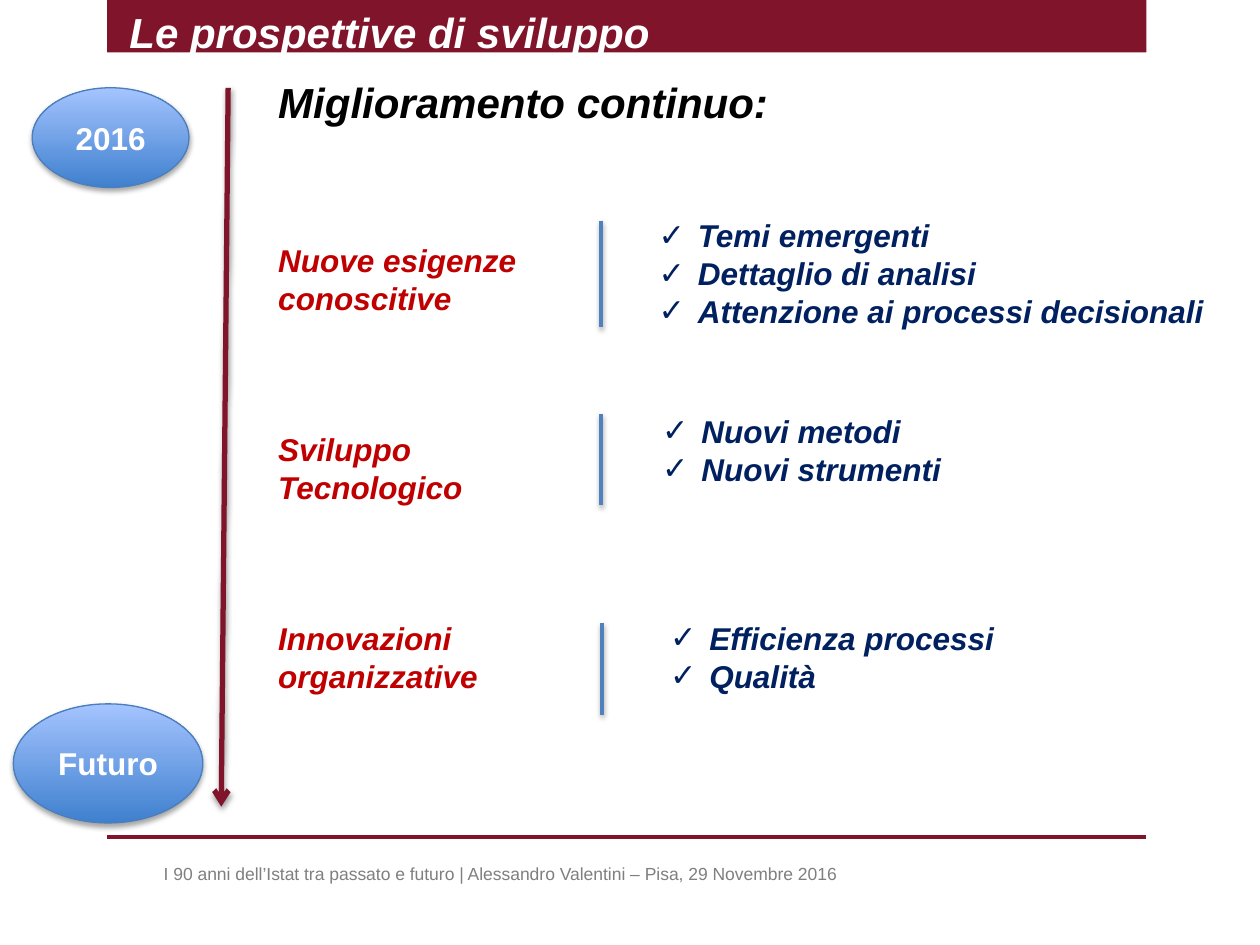
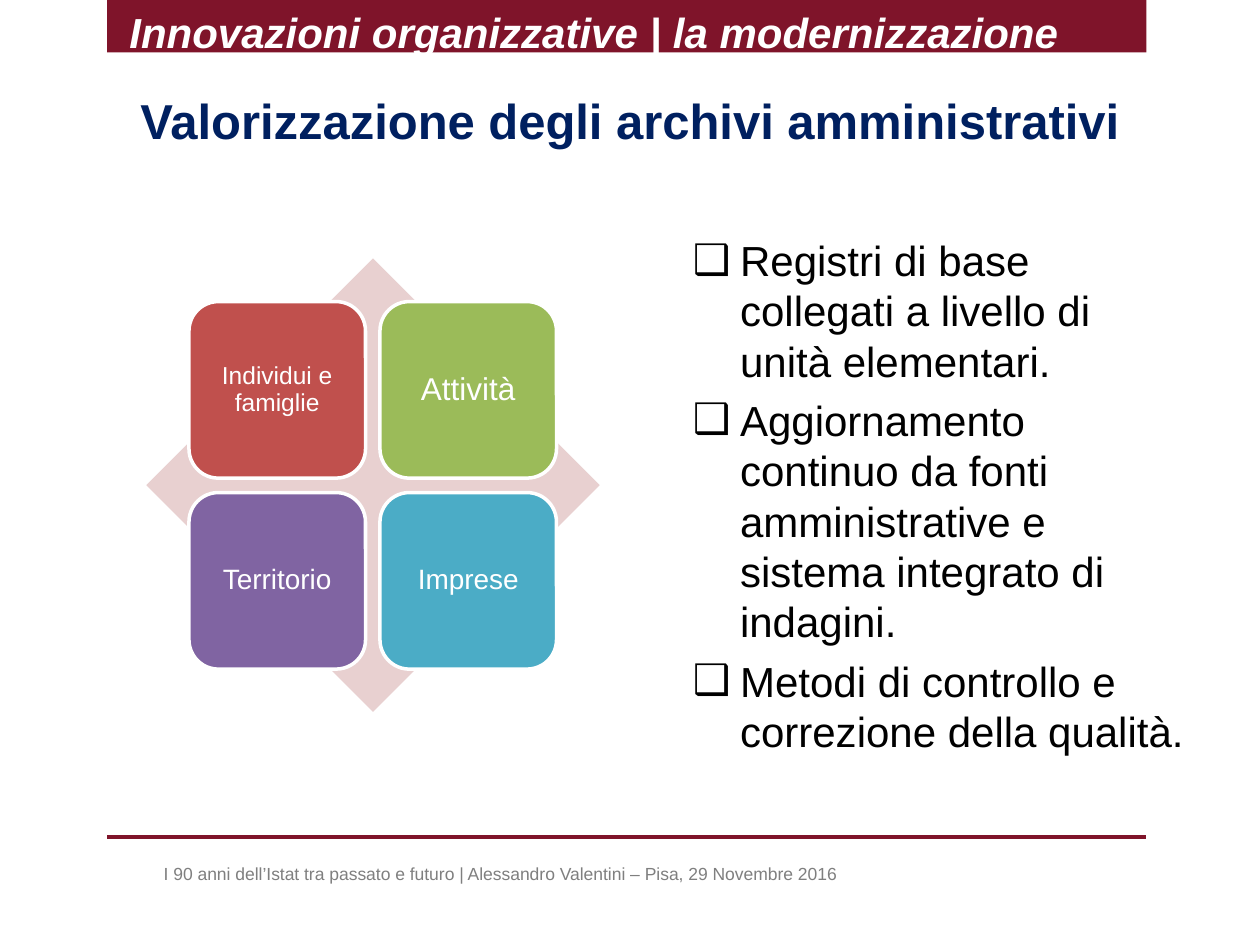
from dataclasses import dataclass
from typing import Any, Optional

from lxml import etree
from pptx import Presentation
from pptx.dml.color import RGBColor
from pptx.enum.shapes import MSO_CONNECTOR, MSO_SHAPE
from pptx.enum.text import MSO_ANCHOR, PP_ALIGN
from pptx.oxml.ns import qn
from pptx.util import Cm, Pt

# Colours
BORDEAUX = RGBColor(0x7F, 0x14, 0x2A)
NAVY = RGBColor(0x00, 0x20, 0x60)
RED = RGBColor(0xC0, 0x00, 0x00)
BLACK = RGBColor(0x00, 0x00, 0x00)
WHITE = RGBColor(0xFF, 0xFF, 0xFF)
GREY = RGBColor(0x7F, 0x7F, 0x7F)
DIVIDER_BLUE = RGBColor(0x4F, 0x81, 0xBD)
OVAL_BORDER = RGBColor(0x4B, 0x7E, 0xBC)
OVAL_GRADIENT = (RGBColor(0x3F, 0x80, 0xCE), RGBColor(0xA4, 0xC4, 0xFF))
PALE_ROSE = RGBColor(0xE8, 0xD0, 0xD0)
TILE_RED = RGBColor(0xC0, 0x50, 0x4D)
TILE_GREEN = RGBColor(0x9B, 0xBB, 0x59)
TILE_PURPLE = RGBColor(0x80, 0x64, 0xA2)
TILE_TEAL = RGBColor(0x4B, 0xAC, 0xC6)

# Text formats
FONT = "Arial"
BAND_TITLE = {"size": Pt(24), "bold": True, "italic": True, "color": WHITE}
HEADING = BAND_TITLE | {"color": BLACK}
THEME = HEADING | {"size": Pt(18), "color": RED}
POINT = THEME | {"color": NAVY}
MILESTONE = {"size": Pt(18), "bold": True, "color": WHITE}
SUBTITLE = {"size": Pt(28), "bold": True, "color": NAVY}
BODY = {"size": Pt(24), "color": BLACK}
FOOTER = {"size": Pt(10), "color": GREY}

FOOTER_TEXT = ("I 90 anni dell’Istat tra passato e futuro | "
               "Alessandro Valentini – Pisa, 29 Novembre 2016")
BAND_LEFT, BAND_RIGHT = 2.16, 23.11


@dataclass(frozen=True)
class Box:
    left: float
    top: float
    width: float
    height: float

    def lengths(self) -> tuple:
        return Cm(self.left), Cm(self.top), Cm(self.width), Cm(self.height)


@dataclass(frozen=True)
class Bullet:
    char: str
    indent: float
    gap: float = 0


@dataclass(frozen=True)
class Shadow:
    opacity: int
    distance: float


@dataclass(frozen=True)
class Milestone:
    label: str
    box: Box


@dataclass(frozen=True)
class Theme:
    lines: tuple[str, ...]
    points: tuple[str, ...]
    points_box: Box
    divider_x: float
    divider_top: float
    divider_bottom: float


@dataclass(frozen=True)
class Tile:
    label: str
    size: int
    fill: RGBColor


TICK = Bullet("✓", 0.79)
SQUARE = Bullet("❑", 0.95, gap=5)
LINE_SHADOW = Shadow(38, 1.6)
OVAL_SHADOW = Shadow(35, 1.8)

MILESTONES = (
    Milestone("2016", Box(0.65, 1.77, 3.16, 2.01)),
    Milestone("Futuro", Box(0.27, 14.19, 3.82, 2.4)),
)
THEMES = (
    Theme(("Nuove esigenze", "conoscitive"),
          ("Temi emergenti", "Dettaglio di analisi",
           "Attenzione ai processi decisionali"),
          Box(13.03, 4.24, 12.7, 2.56), 12.12, 4.45, 6.6),
    Theme(("Sviluppo", "Tecnologico"), ("Nuovi metodi", "Nuovi strumenti"),
          Box(13.1, 8.18, 12.7, 1.8), 12.12, 8.34, 10.19),
    Theme(("Innovazioni", "organizzative"), ("Efficienza processi", "Qualità"),
          Box(13.26, 12.35, 12.7, 1.8), 12.14, 12.56, 14.41),
)
TILES = (
    Tile("Individui e famiglie", 14, TILE_RED),
    Tile("Attività", 18, TILE_GREEN),
    Tile("Territorio", 16, TILE_PURPLE),
    Tile("Imprese", 16, TILE_TEAL),
)
REGISTERS = (
    "Registri di base collegati a livello di unità elementari.",
    "Aggiornamento continuo da fonti amministrative e sistema integrato di indagini.",
    "Metodi di controllo e correzione della qualità.",
)


def add_bullet(paragraph: Any, bullet: Bullet) -> None:
    props = paragraph._p.get_or_add_pPr()
    props.set("marL", str(Cm(bullet.indent)))
    props.set("indent", str(-Cm(bullet.indent)))
    etree.SubElement(props, qn("a:buFont")).set("typeface", FONT)
    etree.SubElement(props, qn("a:buChar")).set("char", bullet.char)


def write(frame: Any, lines: tuple[str, ...], style: dict,
          align: PP_ALIGN = PP_ALIGN.LEFT, bullet: Optional[Bullet] = None) -> None:
    frame.word_wrap = True
    for index, line in enumerate(lines):
        paragraph = frame.paragraphs[0] if index == 0 else frame.add_paragraph()
        paragraph.alignment = align
        if bullet:
            if index and bullet.gap:
                paragraph.space_before = Pt(bullet.gap)
            add_bullet(paragraph, bullet)
        run = paragraph.add_run()
        run.text = line
        run.font.name = FONT
        for name, value in style.items():
            if name == "color":
                run.font.color.rgb = value
            else:
                setattr(run.font, name, value)


def add_text(slide: Any, box: Box, lines: tuple[str, ...], style: dict,
             align: PP_ALIGN = PP_ALIGN.LEFT, bullet: Optional[Bullet] = None) -> None:
    write(slide.shapes.add_textbox(*box.lengths()).text_frame,
          lines, style, align, bullet)


def set_shadow(shape: Any, shadow: Optional[Shadow]) -> None:
    """Replace the theme shadow by the given one, or by none."""
    effects = etree.SubElement(shape._element.spPr, qn("a:effectLst"))
    if shadow:
        outer = etree.SubElement(effects, qn("a:outerShdw"), {
            "blurRad": str(Pt(3.1)), "dist": str(Pt(shadow.distance)),
            "dir": "5400000", "rotWithShape": "0"})
        color = etree.SubElement(outer, qn("a:srgbClr"), val="000000")
        etree.SubElement(color, qn("a:alpha"), val=str(shadow.opacity * 1000))


def add_line(slide: Any, start: tuple[float, float], end: tuple[float, float],
             color: RGBColor, width: float, shadow: Optional[Shadow] = None,
             arrow: bool = False) -> None:
    line = slide.shapes.add_connector(
        MSO_CONNECTOR.STRAIGHT, *(Cm(value) for value in start + end))
    line.line.color.rgb = color
    line.line.width = Pt(width)
    if arrow:
        etree.SubElement(line.line._get_or_add_ln(), qn("a:tailEnd"), type="arrow")
    set_shadow(line, shadow)


def add_figure(slide: Any, kind: MSO_SHAPE, box: Box, fill: RGBColor) -> Any:
    figure = slide.shapes.add_shape(kind, *box.lengths())
    figure.shadow.inherit = False
    figure.fill.solid()
    figure.fill.fore_color.rgb = fill
    figure.line.fill.background()
    return figure


def add_milestone(slide: Any, milestone: Milestone) -> None:
    oval = slide.shapes.add_shape(MSO_SHAPE.OVAL, *milestone.box.lengths())
    oval.fill.gradient()
    oval.fill.gradient_angle = 90
    for stop, color in zip(oval.fill.gradient_stops, OVAL_GRADIENT):
        stop.color.rgb = color
    oval.line.color.rgb = OVAL_BORDER
    oval.line.width = Pt(0.75)
    set_shadow(oval, OVAL_SHADOW)
    oval.text_frame.vertical_anchor = MSO_ANCHOR.MIDDLE
    write(oval.text_frame, (milestone.label,), MILESTONE, PP_ALIGN.CENTER)


def add_theme(slide: Any, theme: Theme, top: float) -> None:
    add_text(slide, Box(5.36, top, 6.4, 1.8), theme.lines, THEME)
    add_line(slide, (theme.divider_x, theme.divider_top),
             (theme.divider_x, theme.divider_bottom), DIVIDER_BLUE, 2, LINE_SHADOW)
    add_text(slide, theme.points_box, theme.points, POINT, bullet=TICK)


def add_tile(slide: Any, tile: Tile, left: float, top: float) -> None:
    figure = add_figure(slide, MSO_SHAPE.ROUNDED_RECTANGLE,
                        Box(left, top, 3.56, 3.56), tile.fill)
    figure.line.color.rgb = WHITE
    figure.line.width = Pt(2)
    frame = figure.text_frame
    frame.vertical_anchor = MSO_ANCHOR.MIDDLE
    for side in ("left", "top", "right", "bottom"):
        setattr(frame, f"margin_{side}", Cm(0.17))
    write(frame, (tile.label,), {"size": Pt(tile.size), "color": WHITE},
          PP_ALIGN.CENTER)
    frame.paragraphs[0].line_spacing = 0.9


def add_base_slide(deck: Any, title: str) -> Any:
    """Blank slide with title band, bottom rule and footer."""
    slide = deck.slides.add_slide(deck.slide_layouts[6])
    add_figure(slide, MSO_SHAPE.RECTANGLE,
               Box(BAND_LEFT, 0, BAND_RIGHT - BAND_LEFT, 1.06), BORDEAUX)
    add_line(slide, (BAND_LEFT, 16.87), (BAND_RIGHT, 16.87), BORDEAUX, 2)
    add_text(slide, Box(2.36, 0, 20.95, 1.27), (title,), BAND_TITLE)
    add_text(slide, Box(3.05, 17.27, 19.48, 0.69), (FOOTER_TEXT,), FOOTER)
    return slide


def build_prospects(deck: Any) -> None:
    slide = add_base_slide(deck, "Le prospettive di sviluppo")
    add_text(slide, Box(5.36, 1.42, 18.85, 1.27), ("Miglioramento continuo:",), HEADING)
    # Themes at equal steps, each with its points
    for index, theme in enumerate(THEMES):
        add_theme(slide, theme, 4.73 + index * 3.81)
    # Timeline
    add_line(slide, (4.6, 1.77), (4.46, 16.26), BORDEAUX, 3, LINE_SHADOW, arrow=True)
    for milestone in MILESTONES:
        add_milestone(slide, milestone)


def build_modernisation(deck: Any) -> None:
    slide = add_base_slide(deck, "Innovazioni organizzative | la modernizzazione")
    add_text(slide, Box(1.27, 1.7, 22.86, 1.93),
             ("Valorizzazione degli archivi amministrativi",), SUBTITLE, PP_ALIGN.CENTER)
    # Matrix of registers on a diamond
    add_figure(slide, MSO_SHAPE.DIAMOND, Box(2.95, 5.21, 9.14, 9.14), PALE_ROSE)
    for index, tile in enumerate(TILES):
        row, column = divmod(index, 2)
        add_tile(slide, tile, 3.81 + column * 3.85, 6.08 + row * 3.85)
    add_text(slide, Box(13.72, 4.6, 10.41, 12.57), REGISTERS, BODY, bullet=SQUARE)


def main() -> None:
    deck = Presentation()
    deck.slide_width, deck.slide_height = Cm(25.4), Cm(19.05)
    build_prospects(deck)
    build_modernisation(deck)
    deck.save("out.pptx")


if __name__ == "__main__":
    main()
